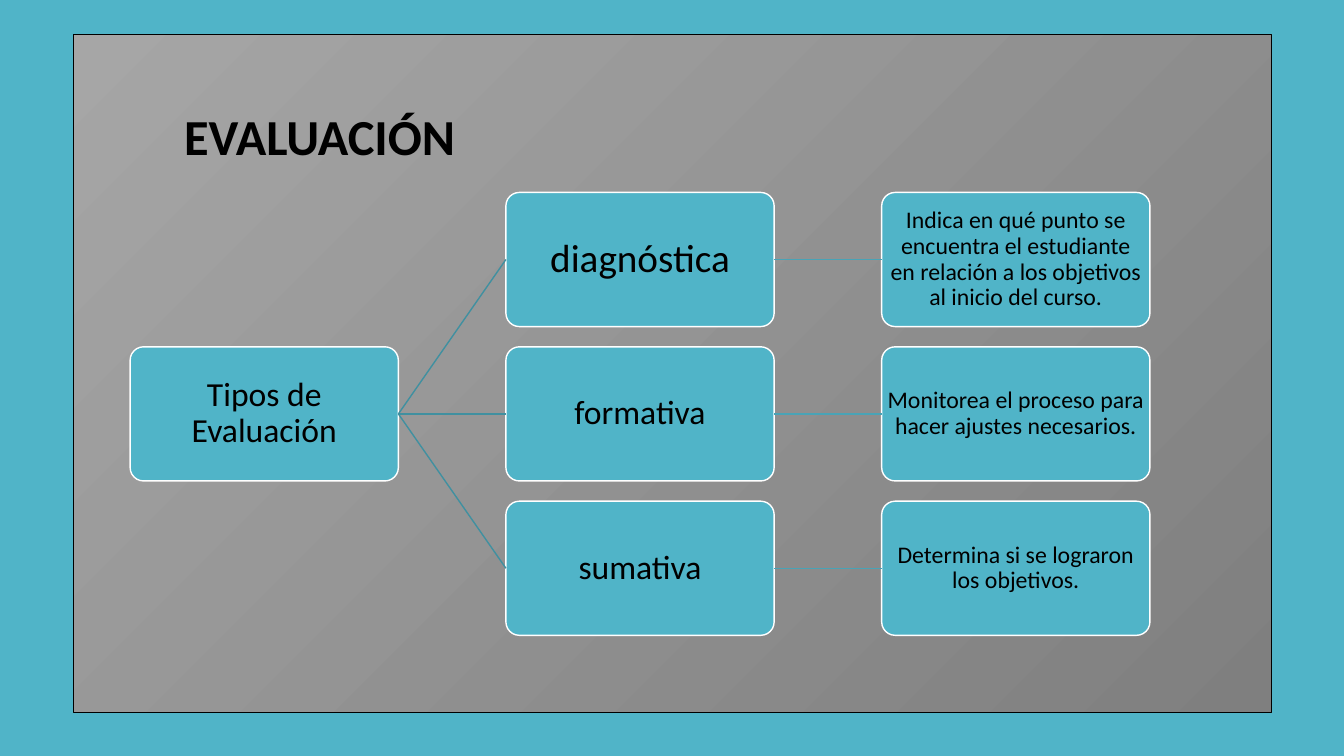
import dataclasses

import lxml.etree
import pptx
import pptx.dml.color
import pptx.enum.shapes
import pptx.enum.text
import pptx.oxml.ns
import pptx.shapes.autoshape
import pptx.slide
import pptx.util

Cm = pptx.util.Cm
Pt = pptx.util.Pt
Box = pptx.shapes.autoshape.Shape

COLOURS = {
    "background": "50B4C8",
    "panel_start": "A6A6A6",
    "panel_end": "7F7F7F",
    "box": "50B4C8",
    "box_line": "FFFFFF",
    "type_link": "4090A0",
    "purpose_link": "49A3B6",
    "ink": "000000",
}
FONT = "Calibri"
BOX_WIDTH, BOX_HEIGHT = 6.76, 3.38
GRID_LEFT, GRID_TOP = 3.28, 4.85
COLUMN_STEP, ROW_STEP = 9.47, 3.89


@dataclasses.dataclass(frozen=True)
class Node:
    text: str
    column: int
    row: int
    size: float


ROOT = Node("Tipos de Evaluación", 0, 1, 24)
TYPES = [
    Node("diagnóstica", 1, 0, 28),
    Node("formativa", 1, 1, 24),
    Node("sumativa", 1, 2, 24),
]
PURPOSES = [
    Node("Indica en qué punto se encuentra el estudiante en relación a los "
         "objetivos al inicio del curso.", 2, 0, 17),
    Node("Monitorea el proceso para hacer ajustes necesarios.", 2, 1, 17),
    Node("Determina si se lograron los objetivos.", 2, 2, 17),
]


def colour(name: str) -> pptx.dml.color.RGBColor:
    return pptx.dml.color.RGBColor.from_string(COLOURS[name])


def format_text(box: Box, size: float, bold: bool = False) -> None:
    for para in box.text_frame.paragraphs:
        for span in para.runs:
            span.font.name = FONT
            span.font.size = Pt(size)
            span.font.bold = bold
            span.font.color.rgb = colour("ink")


def draw_title_panel(page: pptx.slide.Slide) -> None:
    """Turn the title placeholder into the framed grey panel with the heading."""
    panel = page.shapes.title
    panel.left, panel.top = Cm(1.85), Cm(0.86)
    panel.width, panel.height = Cm(30.2), Cm(17.1)
    panel.fill.gradient()
    panel.fill.gradient_angle = 315
    for stop, name in zip(panel.fill.gradient_stops, ("panel_start", "panel_end")):
        stop.color.rgb = colour(name)
    panel.line.color.rgb = colour("ink")
    panel.line.width = Pt(0.75)

    frame = panel.text_frame
    frame.text = "EVALUACIÓN"
    frame.word_wrap = True
    frame.auto_size = pptx.enum.text.MSO_AUTO_SIZE.NONE
    frame.vertical_anchor = pptx.enum.text.MSO_ANCHOR.TOP
    frame.margin_left, frame.margin_top = Cm(2.79), Cm(1.78)
    para = frame.paragraphs[0]
    para.alignment = pptx.enum.text.PP_ALIGN.LEFT
    para.space_before = Pt(0)
    format_text(panel, 36, bold=True)


def draw_node(page: pptx.slide.Slide, node: Node) -> Box:
    box = page.shapes.add_shape(
        pptx.enum.shapes.MSO_SHAPE.ROUNDED_RECTANGLE,
        Cm(GRID_LEFT + node.column * COLUMN_STEP),
        Cm(GRID_TOP + node.row * ROW_STEP),
        Cm(BOX_WIDTH), Cm(BOX_HEIGHT),
    )
    box.adjustments[0] = 0.1
    box.shadow.inherit = False
    box.fill.solid()
    box.fill.fore_color.rgb = colour("box")
    box.line.color.rgb = colour("box_line")
    box.line.width = Pt(1)

    frame = box.text_frame
    frame.text = node.text
    frame.word_wrap = True
    frame.vertical_anchor = pptx.enum.text.MSO_ANCHOR.MIDDLE
    frame.margin_left = frame.margin_right = Cm(0.03)
    frame.margin_top = frame.margin_bottom = Cm(0.03)
    para = frame.paragraphs[0]
    para.alignment = pptx.enum.text.PP_ALIGN.CENTER
    para.line_spacing = 0.9
    format_text(box, node.size)
    return box


def link(page: pptx.slide.Slide, start: Box, end: Box, colour_name: str) -> None:
    """Join the right side of one box to the left side of the next."""
    line = page.shapes.add_connector(
        pptx.enum.shapes.MSO_CONNECTOR.STRAIGHT, 0, 0, 0, 0)
    line.begin_connect(start, 3)
    line.end_connect(end, 1)
    line.line.color.rgb = colour(colour_name)
    line.line.width = Pt(1)
    lxml.etree.SubElement(line.element.spPr, pptx.oxml.ns.qn("a:effectLst"))


def main() -> None:
    deck = pptx.Presentation()
    deck.slide_width, deck.slide_height = Cm(33.87), Cm(19.05)
    page = deck.slides.add_slide(deck.slide_layouts.get_by_name("Title Only"))
    page.background.fill.solid()
    page.background.fill.fore_color.rgb = colour("background")

    draw_title_panel(page)
    root_box = draw_node(page, ROOT)
    for type_node, purpose_node in zip(TYPES, PURPOSES):
        type_box = draw_node(page, type_node)
        purpose_box = draw_node(page, purpose_node)
        link(page, root_box, type_box, "type_link")
        link(page, type_box, purpose_box, "purpose_link")

    deck.save("out.pptx")


if __name__ == "__main__":
    main()
